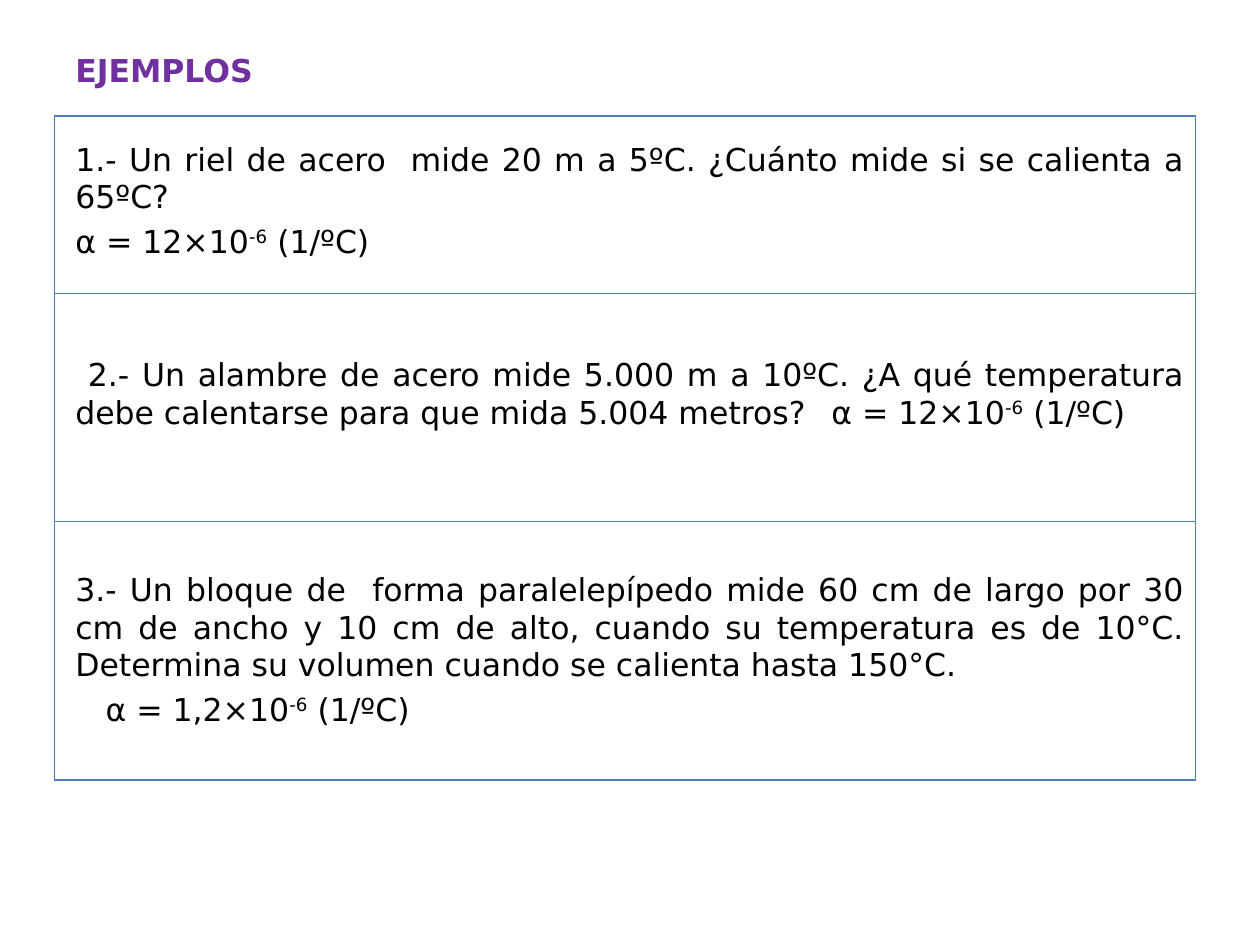
"""Builds a slide with three thermal expansion exercises in a ruled frame."""
from lxml import etree
from pptx import Presentation
from pptx.dml.color import RGBColor
from pptx.enum.shapes import MSO_CONNECTOR
from pptx.enum.text import PP_ALIGN
from pptx.oxml.ns import qn
from pptx.util import Inches, Pt

STRAIGHT = MSO_CONNECTOR.STRAIGHT
LEFT, JUSTIFY = PP_ALIGN.LEFT, PP_ALIGN.JUSTIFY


def color(value):
    return RGBColor.from_string(value)


def write(para, text, size=18, bold=False, fill="000000", align=JUSTIFY,
          before=0, margin=0, indent=0, tab=None):
    para.alignment = align
    para.space_before = Pt(before)
    props = para._p.get_or_add_pPr()
    props.set("marL", str(Inches(margin)))
    props.set("indent", str(Inches(indent)))
    if tab:
        tabs = etree.SubElement(props, qn("a:tabLst"))
        etree.SubElement(tabs, qn("a:tab"), pos=str(Inches(tab)), algn="l")
    for index, part in enumerate(text.split("^")):
        span = para.add_run()
        span.text = part
        span.font.name = "DejaVu Sans"
        span.font.size = Pt(size)
        span.font.bold = bold
        span.font.color.rgb = color(fill)
        if index % 2:
            span.font._element.set("baseline", "30000")


deck = Presentation()
deck.slide_width, deck.slide_height = Inches(10), Inches(7.5)
page = deck.slides.add_slide(deck.slide_layouts[6])

box = page.shapes.add_textbox(Inches(0.5), Inches(0.36), Inches(9), Inches(6.34))
frame = box.text_frame
frame.word_wrap = True

paragraphs = [
    ("EJEMPLOS", dict(bold=True, fill="7030A0", align=LEFT)),
    ("1.- Un riel de acero  mide 20 m a 5ºC. ¿Cuánto mide si se calienta a 65ºC?",
     dict(before=28.8)),
    ("α = 12×10^-6^ (1/ºC)", dict(before=3.6)),
    ("2.- Un alambre de acero mide 5.000 m a 10ºC. ¿A qué temperatura debe "
     "calentarse para que mida 5.004 metros?\tα = 12×10^-6^ (1/ºC)",
     dict(before=54.5, indent=0.1, tab=6.03)),
    ("3.- Un bloque de  forma paralelepípedo mide 60 cm de largo por 30 cm de "
     "ancho y 10 cm de alto, cuando su temperatura es de 10°C. Determina su "
     "volumen cuando se calienta hasta 150°C.", dict(before=79.7)),
    ("α = 1,2×10^-6^ (1/ºC)", dict(before=3.6, margin=0.24)),
]
for index, (text, style) in enumerate(paragraphs):
    para = frame.add_paragraph() if index else frame.paragraphs[0]
    write(para, text, **style)

left, right = 0.43, 9.49
row_edges = [0.92, 2.33, 4.14, 6.19]
rules = [(left, y, right, y) for y in row_edges]
rules += [(x, row_edges[0], x, row_edges[-1]) for x in (left, right)]
for ends in rules:
    rule = page.shapes.add_connector(STRAIGHT, *[Inches(value) for value in ends])
    rule.line.color.rgb = color("4B7EBC")
    rule.line.width = Pt(0.75)
    etree.SubElement(rule._element.spPr, qn("a:effectLst"))

deck.save("out.pptx")
